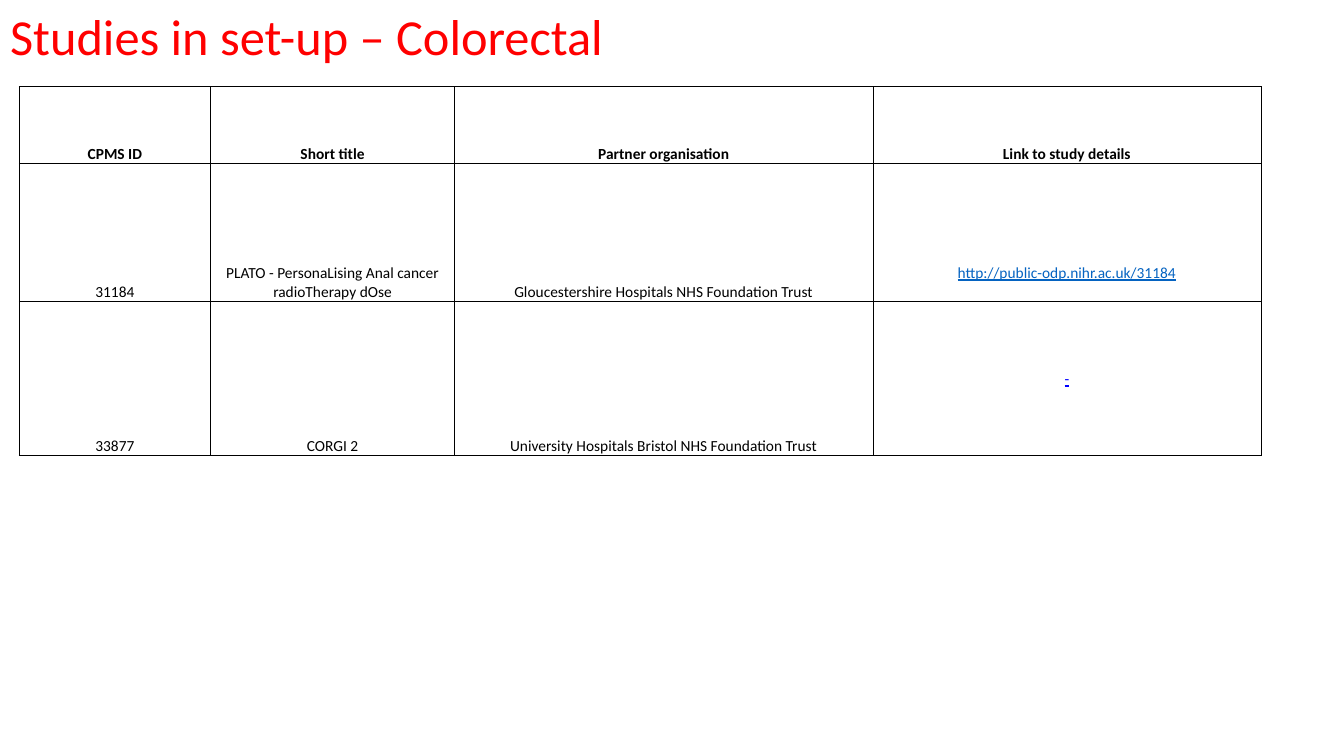
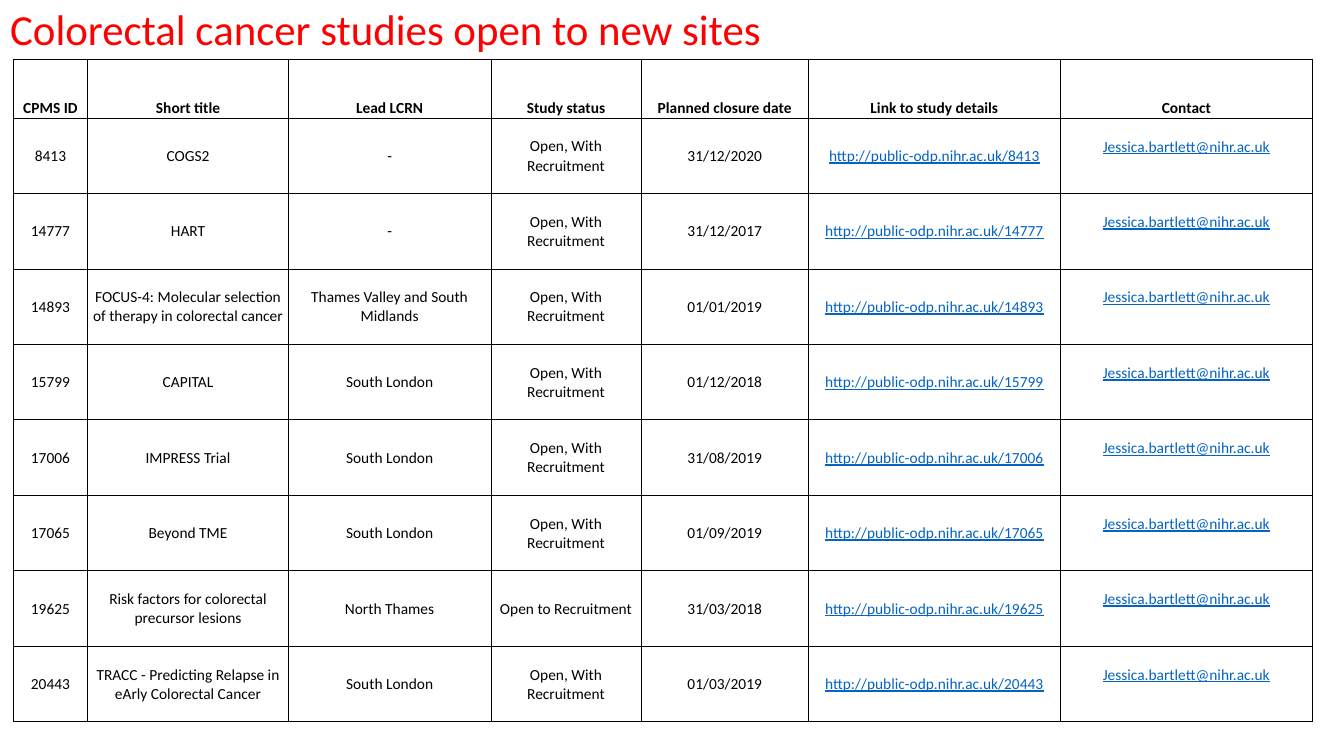
from dataclasses import dataclass, replace
from typing import Optional

from lxml.etree import SubElement
from pptx import Presentation
from pptx.dml.color import RGBColor
from pptx.enum.text import MSO_ANCHOR as Anchor, MSO_AUTO_SIZE as AutoSize, PP_ALIGN as Align
from pptx.oxml.ns import qn
from pptx.util import Pt

RED = RGBColor(0xFF, 0x00, 0x00)
BLACK = RGBColor(0x00, 0x00, 0x00)
WHITE = RGBColor(0xFF, 0xFF, 0xFF)
LINK_BLUE = RGBColor(0x05, 0x63, 0xC1)
PURE_BLUE = RGBColor(0x00, 0x00, 0xFF)

FONT = "Calibri"
CELL_SIZE = 11
CELL_INSET = 0.7
LINE_HEIGHT = 13.5
BORDER_WIDTH = 0.5
TITLE_ONLY = 5

STUDY_URL = "http://public-odp.nihr.ac.uk/"
CONTACT = "Jessica.bartlett@nihr.ac.uk"
RECRUITING = "Open, With Recruitment"


@dataclass(frozen=True)
class Entry:
    """One table cell; bottom_gap is the space kept free under its text."""
    text: str
    anchor: Anchor = Anchor.MIDDLE
    color: RGBColor = BLACK
    bold: bool = False
    underline: bool = False
    bottom_gap: float = 0


@dataclass(frozen=True)
class Title:
    text: str
    top: float
    width: float
    height: float
    size: float
    line_spacing: float


@dataclass(frozen=True)
class StudyTable:
    left: float
    top: float
    column_widths: list[float]
    row_heights: list[float]
    rows: list[list[Entry]]


@dataclass(frozen=True)
class OpenStudy:
    cpms_id: str
    short_title: str
    lead_lcrn: str
    closure_date: str
    status: str = RECRUITING


OPEN_STUDIES = [
    OpenStudy("8413", "COGS2", "-", "31/12/2020"),
    OpenStudy("14777", "HART", "-", "31/12/2017"),
    OpenStudy("14893", "FOCUS-4: Molecular selection of therapy in colorectal cancer",
              "Thames Valley and South Midlands", "01/01/2019"),
    OpenStudy("15799", "CAPITAL", "South London", "01/12/2018"),
    OpenStudy("17006", "IMPRESS Trial", "South London", "31/08/2019"),
    OpenStudy("17065", "Beyond TME", "South London", "01/09/2019"),
    OpenStudy("19625", "Risk factors for colorectal precursor lesions",
              "North Thames", "31/03/2018", "Open to Recruitment"),
    OpenStudy("20443", "TRACC - Predicting Relapse in eArly Colorectal Cancer",
              "South London", "01/03/2019"),
]


def header_row(*labels: str) -> list[Entry]:
    return [Entry(label, Anchor.BOTTOM, bold=True) for label in labels]


def bottom_row(*texts: str) -> list[Entry]:
    return [Entry(text, Anchor.BOTTOM) for text in texts]


def link(text: str, color: RGBColor = LINK_BLUE) -> Entry:
    return Entry(text, color=color, underline=True)


def raised(entry: Entry, anchor: Anchor) -> Entry:
    """Keep one line free under the text."""
    return replace(entry, anchor=anchor, bottom_gap=LINE_HEIGHT)


def open_study_row(study: OpenStudy) -> list[Entry]:
    plain = (study.cpms_id, study.short_title, study.lead_lcrn, study.status, study.closure_date)
    return [
        *(Entry(text) for text in plain),
        link(STUDY_URL + study.cpms_id),
        raised(link(CONTACT), Anchor.MIDDLE),
    ]


SETUP_TITLE = Title("Studies in set-up – Colorectal", 0, 622, 56, 36, 0.9)
SETUP_TABLE = StudyTable(
    left=13.7, top=62,
    column_widths=[136.8, 174.2, 298.8, 277.2],
    row_heights=[54.7, 98.6, 110.2],
    rows=[
        header_row("CPMS ID", "Short title", "Partner organisation", "Link to study details"),
        [*bottom_row("31184", "PLATO - PersonaLising Anal cancer radioTherapy dOse",
                     "Gloucestershire Hospitals NHS Foundation Trust"),
         raised(link(STUDY_URL + "31184"), Anchor.BOTTOM)],
        [*bottom_row("33877", "CORGI 2", "University Hospitals Bristol NHS Foundation Trust"),
         link("-", PURE_BLUE)],
    ],
)

OPEN_TITLE = Title("Colorectal cancer studies open to new sites", 6.5, 594, 36.7, 30.6, 0.7)
OPEN_TABLE = StudyTable(
    left=9.4, top=42.5,
    column_widths=[53.3, 143.3, 144.7, 107.3, 119.5, 180, 180],
    row_heights=[41.8] + [53.9] * len(OPEN_STUDIES),
    rows=[
        header_row("CPMS ID", "Short title", "Lead LCRN", "Study status",
                   "Planned closure date", "Link to study details", "Contact"),
        *(open_study_row(study) for study in OPEN_STUDIES),
    ],
)


def add_run(paragraph, text: str, size: float, color: RGBColor,
            bold: bool = False, underline: Optional[bool] = None) -> None:
    run = paragraph.add_run()
    run.text = text
    font = run.font
    font.name, font.size, font.bold, font.underline = FONT, Pt(size), bold, underline
    font.color.rgb = color


def add_title(slide, title: Title) -> None:
    heading = slide.shapes.title
    heading.left, heading.top = Pt(0), Pt(title.top)
    heading.width, heading.height = Pt(title.width), Pt(title.height)
    frame = heading.text_frame
    frame.word_wrap = True
    frame.auto_size = AutoSize.NONE
    frame.vertical_anchor = Anchor.MIDDLE
    paragraph = frame.paragraphs[0]
    paragraph.alignment = Align.LEFT
    paragraph.line_spacing = title.line_spacing
    add_run(paragraph, title.text, title.size, RED)


def add_borders(cell) -> None:
    properties = cell._tc.get_or_add_tcPr()
    for side in ("a:lnL", "a:lnR", "a:lnT", "a:lnB"):
        line = SubElement(properties, qn(side), w=str(Pt(BORDER_WIDTH)))
        fill = SubElement(line, qn("a:solidFill"))
        SubElement(fill, qn("a:srgbClr"), val=str(BLACK))


def fill_cell(cell, entry: Entry) -> None:
    add_borders(cell)
    cell.fill.solid()
    cell.fill.fore_color.rgb = WHITE
    cell.vertical_anchor = entry.anchor
    cell.margin_left = cell.margin_right = cell.margin_top = Pt(CELL_INSET)
    cell.margin_bottom = Pt(entry.bottom_gap)
    paragraph = cell.text_frame.paragraphs[0]
    paragraph.alignment = Align.CENTER
    add_run(paragraph, entry.text, CELL_SIZE, entry.color, entry.bold, entry.underline)


def add_study_table(slide, studies: StudyTable) -> None:
    table = slide.shapes.add_table(
        len(studies.row_heights), len(studies.column_widths),
        Pt(studies.left), Pt(studies.top),
        Pt(sum(studies.column_widths)), Pt(sum(studies.row_heights)),
    ).table
    table.first_row = table.horz_banding = False
    for column, width in zip(table.columns, studies.column_widths):
        column.width = Pt(width)
    for row, height, entries in zip(table.rows, studies.row_heights, studies.rows):
        row.height = Pt(height)
        for cell, entry in zip(row.cells, entries):
            fill_cell(cell, entry)


def main() -> None:
    deck = Presentation()
    deck.slide_width, deck.slide_height = Pt(960), Pt(540)
    for title, studies in ((SETUP_TITLE, SETUP_TABLE), (OPEN_TITLE, OPEN_TABLE)):
        slide = deck.slides.add_slide(deck.slide_layouts[TITLE_ONLY])
        add_title(slide, title)
        add_study_table(slide, studies)
    deck.save("out.pptx")


if __name__ == "__main__":
    main()
